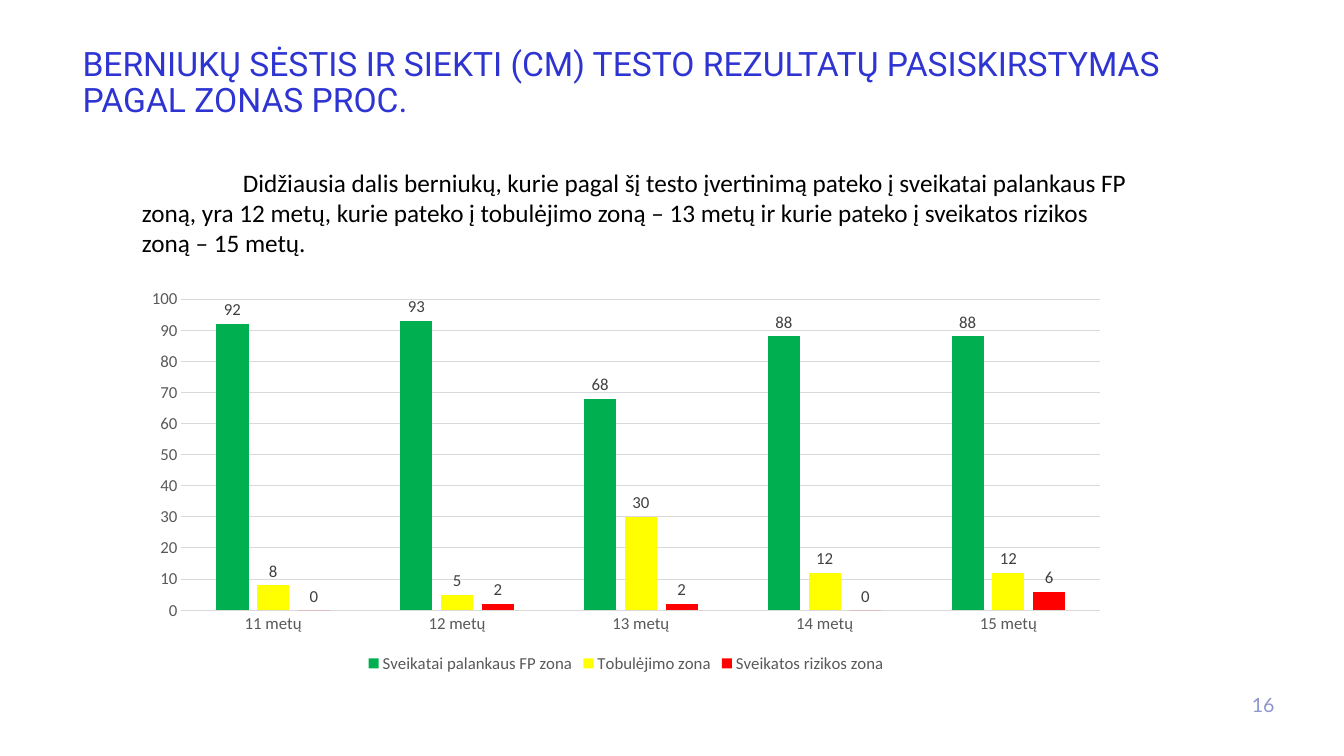
import pptx
import pptx.chart.data
import pptx.dml.color
import pptx.enum.chart
import pptx.enum.text
import pptx.util
from dataclasses import dataclass

Inches = pptx.util.Inches
Pt = pptx.util.Pt
Align = pptx.enum.text.PP_ALIGN
Anchor = pptx.enum.text.MSO_ANCHOR
Charts = pptx.enum.chart


@dataclass(frozen=True)
class Theme:
    head: str = "Roboto"
    body: str = "Calibri"
    page: str = "Lato"
    blue: str = "2E34D1"
    pale: str = "8E96CD"
    black: str = "000000"
    dark: str = "404040"
    gray: str = "595959"
    grid: str = "D9D9D9"
    zones: tuple = ("00B050", "FFFF00", "FF0000")
    title: int = 24
    text: int = 18
    number: int = 14
    label: int = 12


def rgb(code):
    return pptx.dml.color.RGBColor.from_string(code)


def style(font, name, size, color):
    font.name = name
    font.size = Pt(size)
    font.color.rgb = rgb(color)


class Maker:
    def __init__(self, slide, theme):
        self.slide = slide
        self.theme = theme

    def text(self, box, words, name, size, color, align=Align.LEFT,
             anchor=Anchor.TOP, space=1.0, indent=0):
        """Add a wrapped text box; indent is the first line's, in inches."""
        frame = self.slide.shapes.add_textbox(*map(Inches, box)).text_frame
        frame.word_wrap = True
        frame.vertical_anchor = anchor
        para = frame.paragraphs[0]
        para.text = words
        para.alignment = align
        para.line_spacing = space
        if indent:
            props = para._p.get_or_add_pPr()
            props.set("marL", "0")
            props.set("indent", str(Inches(indent)))
        style(para.font, name, size, color)

    def line(self, form):
        form.line.color.rgb = rgb(self.theme.grid)
        form.line.width = Pt(0.75)

    def axis(self, axis):
        axis.major_tick_mark = Charts.XL_TICK_MARK.NONE
        axis.minor_tick_mark = Charts.XL_TICK_MARK.NONE
        style(axis.tick_labels.font, self.theme.body, self.theme.label,
              self.theme.gray)

    def chart(self, box, groups, zones):
        theme = self.theme
        data = pptx.chart.data.CategoryChartData()
        data.categories = groups
        for name, values in zones.items():
            data.add_series(name, values)
        chart = self.slide.shapes.add_chart(
            Charts.XL_CHART_TYPE.COLUMN_CLUSTERED, *map(Inches, box), data
        ).chart
        style(chart.font, theme.body, theme.label, theme.black)
        chart.has_title = False
        chart.has_legend = True
        chart.legend.position = Charts.XL_LEGEND_POSITION.BOTTOM
        chart.legend.include_in_layout = False
        style(chart.legend.font, theme.body, theme.label, theme.gray)

        self.axis(chart.category_axis)
        self.line(chart.category_axis.format)
        scale = chart.value_axis
        self.axis(scale)
        scale.format.line.fill.background()
        scale.has_major_gridlines = True
        self.line(scale.major_gridlines.format)
        scale.minimum_scale = 0
        scale.maximum_scale = 100
        scale.major_unit = 10

        plot = chart.plots[0]
        plot.gap_width = 219
        plot.overlap = -27
        plot.vary_by_categories = False
        for series, color in zip(plot.series, theme.zones):
            series.format.fill.solid()
            series.format.fill.fore_color.rgb = rgb(color)
            series.invert_if_negative = False
            labels = series.data_labels
            labels.show_value = True
            labels.position = Charts.XL_LABEL_POSITION.OUTSIDE_END
            style(labels.font, theme.body, theme.label, theme.dark)


def main():
    deck = pptx.Presentation()
    deck.slide_width = Inches(13.33)
    deck.slide_height = Inches(7.5)
    theme = Theme()
    maker = Maker(deck.slides.add_slide(deck.slide_layouts[6]), theme)
    maker.text(
        (0.72, 0.42, 11.41, 1.38),
        "BERNIUKŲ SĖSTIS IR SIEKTI (CM) TESTO REZULTATŲ PASISKIRSTYMAS "
        "PAGAL ZONAS PROC.",
        theme.head, theme.title, theme.blue, space=0.9)
    maker.text((12.22, 6.79, 0.52, 0.4), "16", theme.page, theme.number,
               theme.pale, align=Align.RIGHT, anchor=Anchor.MIDDLE)
    maker.chart(
        (1.31, 2.79, 9.8, 3.93),
        [f"{age} metų" for age in range(11, 16)],
        {
            "Sveikatai palankaus FP zona": (92, 93, 68, 88, 88),
            "Tobulėjimo zona": (8, 5, 30, 12, 12),
            "Sveikatos rizikos zona": (0, 2, 2, 0, 6),
        })
    maker.text(
        (1.31, 1.61, 10.05, 1.01),
        "Didžiausia dalis berniukų, kurie pagal šį testo įvertinimą pateko "
        "į sveikatai palankaus FP zoną, yra 12 metų, kurie pateko į "
        "tobulėjimo zoną – 13 metų ir kurie pateko į sveikatos rizikos "
        "zoną – 15 metų.",
        theme.body, theme.text, theme.black, indent=1)
    deck.save("out.pptx")


if __name__ == "__main__":
    main()
